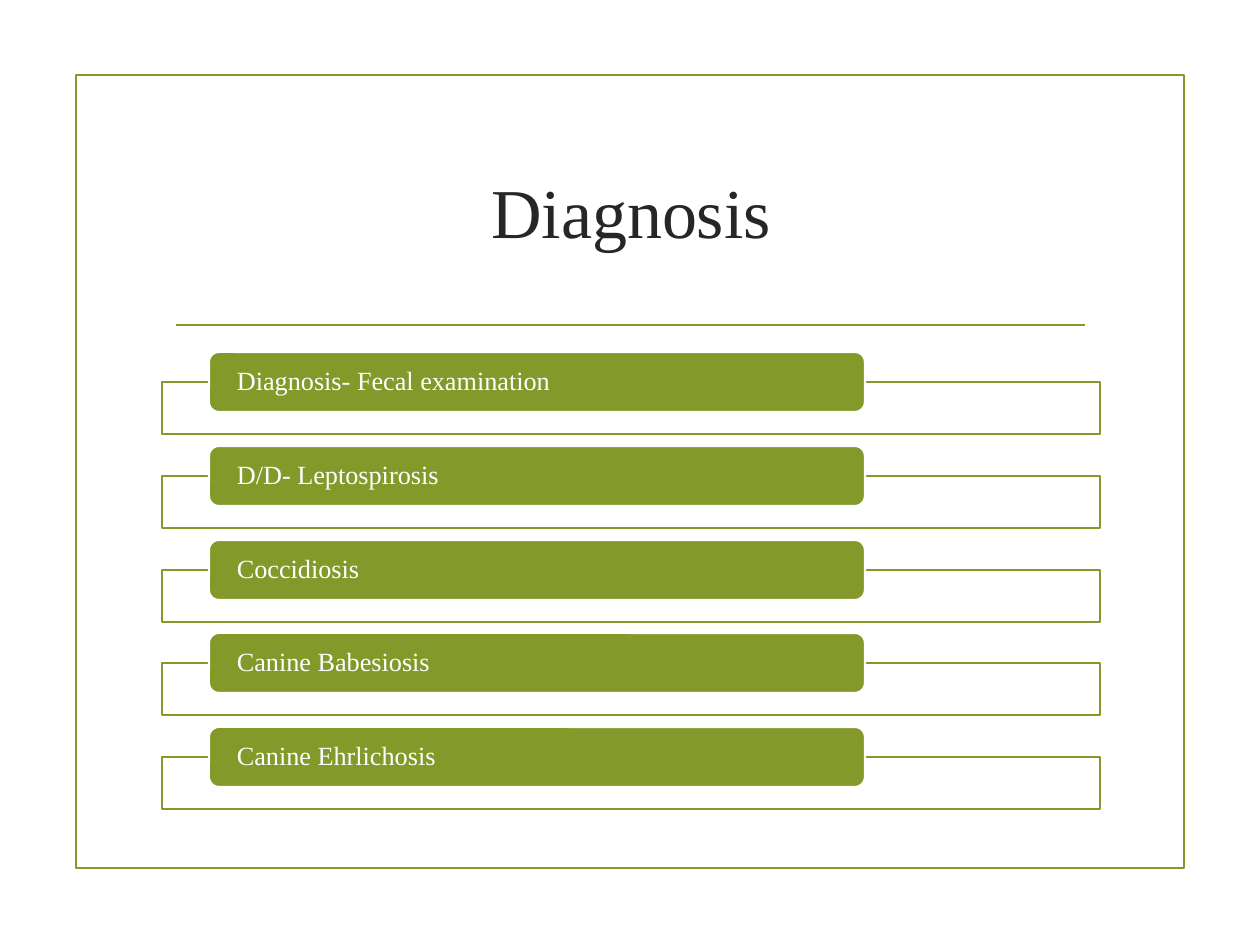
from dataclasses import dataclass

from lxml import etree
from pptx import Presentation
from pptx.dml.color import RGBColor
from pptx.enum.shapes import MSO_CONNECTOR, MSO_SHAPE
from pptx.enum.text import MSO_ANCHOR, PP_ALIGN
from pptx.oxml.ns import qn
from pptx.util import Emu, Pt

RECTANGLE = MSO_SHAPE.RECTANGLE
ROUNDED = MSO_SHAPE.ROUNDED_RECTANGLE
STRAIGHT = MSO_CONNECTOR.STRAIGHT
MIDDLE = MSO_ANCHOR.MIDDLE
LEFT, CENTER = PP_ALIGN.LEFT, PP_ALIGN.CENTER

EMU_PER_PX = 914400 / 126
TITLE_ONLY_LAYOUT = 5
FONT = "Times New Roman"
GREEN, WHITE, DARK = "83992A", "FFFFFF", "262626"
LINE_WIDTH = Pt(1.25)

PANEL_TOP = 382
BAR_RISE = 30
ROW_PITCH = 93.75


@dataclass(frozen=True)
class Box:
    left: int
    top: int
    width: int
    height: int

    def emu(self) -> tuple:
        return px(self.left), px(self.top), px(self.width), px(self.height)


def px(length: int) -> Emu:
    return Emu(round(length * EMU_PER_PX))


def color(value: str) -> RGBColor:
    return RGBColor.from_string(value)


def format_text(text_frame, text: str, size: int, font_color: str, alignment) -> None:
    text_frame.text = text
    text_frame.word_wrap = True
    text_frame.vertical_anchor = MIDDLE
    paragraph = text_frame.paragraphs[0]
    paragraph.alignment = alignment
    paragraph.line_spacing = 0.9
    font = paragraph.runs[0].font
    font.name = FONT
    font.size = Pt(size)
    font.color.rgb = color(font_color)


def draw_shape(slide, kind, box: Box, line_color: str, fill_color: str = ""):
    shape = slide.shapes.add_shape(kind, *box.emu())
    shape.shadow.inherit = False
    if fill_color:
        shape.fill.solid()
        shape.fill.fore_color.rgb = color(fill_color)
    else:
        shape.fill.background()
    shape.line.color.rgb = color(line_color)
    shape.line.width = LINE_WIDTH
    return shape


def draw_divider(slide, left: int, right: int, top: int) -> None:
    divider = slide.shapes.add_connector(STRAIGHT, px(left), px(top), px(right), px(top))
    divider.line.color.rgb = color(GREEN)
    divider.line.width = LINE_WIDTH
    etree.SubElement(divider._element.spPr, qn("a:effectLst"))


def draw_title(slide, text: str, box: Box) -> None:
    title = slide.shapes.title
    title.left, title.top, title.width, title.height = box.emu()
    format_text(title.text_frame, text, 40, DARK, CENTER)


def draw_row(slide, text: str, offset: int) -> None:
    panel_top = PANEL_TOP + offset
    panel = draw_shape(slide, RECTANGLE, Box(162, panel_top, 938, 52), GREEN, WHITE)
    fill_element = panel._element.spPr.find(qn("a:solidFill"))
    etree.SubElement(fill_element[0], qn("a:alpha"), val="90000")
    bar = draw_shape(slide, ROUNDED, Box(209, panel_top - BAR_RISE, 656, 60), WHITE, GREEN)
    text_frame = bar.text_frame
    text_frame.margin_left = text_frame.margin_right = px(25)
    text_frame.margin_top = text_frame.margin_bottom = 0
    format_text(text_frame, text, 15, WHITE, LEFT)


def main() -> None:
    presentation = Presentation()
    presentation.slide_width = px(1260)
    presentation.slide_height = px(945)
    slide = presentation.slides.add_slide(presentation.slide_layouts[TITLE_ONLY_LAYOUT])

    draw_shape(slide, RECTANGLE, Box(76, 75, 1108, 793), GREEN)
    draw_divider(slide, 176, 1085, 325)
    draw_title(slide, "Diagnosis", Box(162, 126, 938, 180))

    findings = (
        "Diagnosis- Fecal examination",
        "D/D- Leptospirosis",
        "Coccidiosis",
        "Canine Babesiosis",
        "Canine Ehrlichosis",
    )
    for index, finding in enumerate(findings):
        draw_row(slide, finding, round(index * ROW_PITCH))

    presentation.save("out.pptx")


if __name__ == "__main__":
    main()
